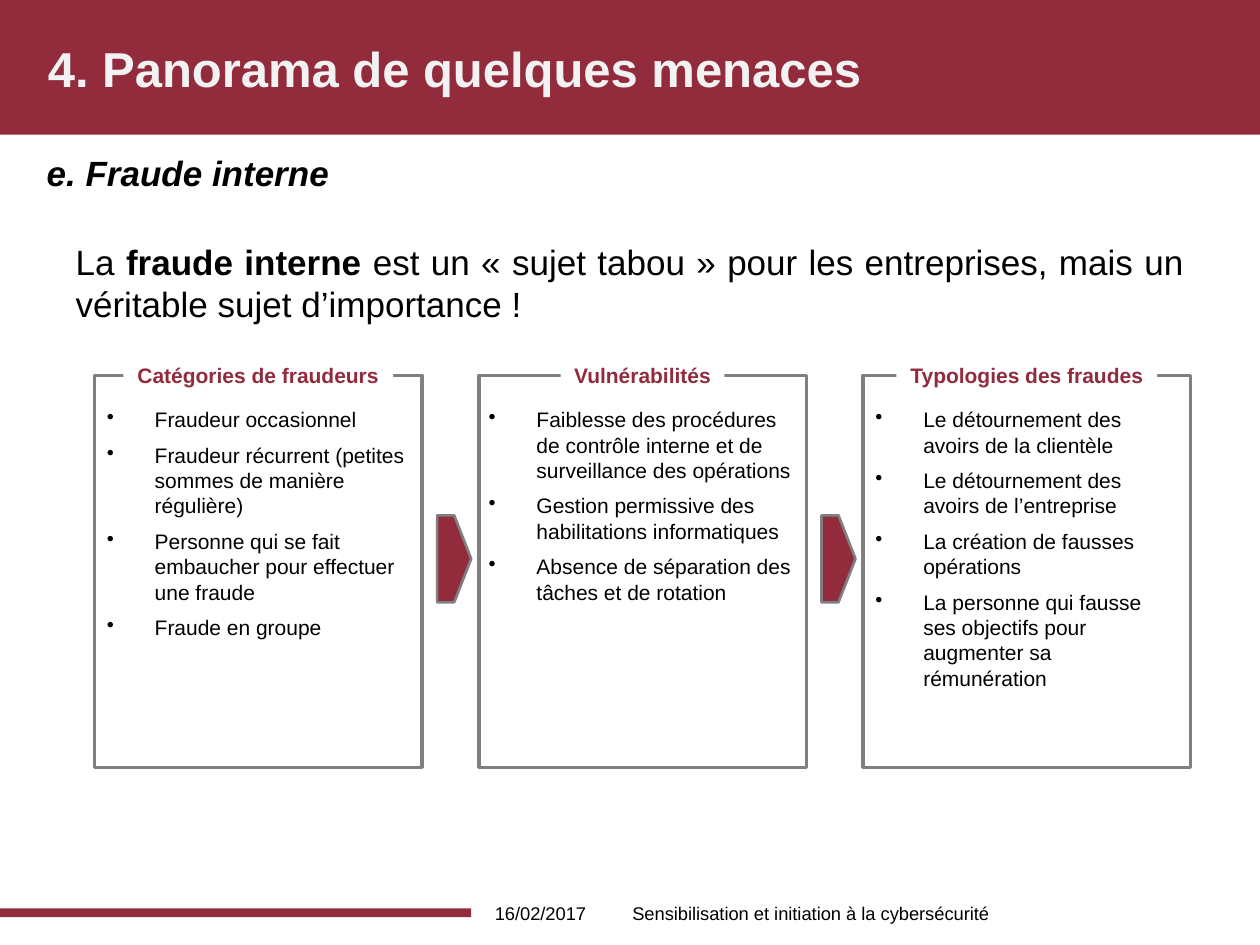
"""Build the slide on internal fraud: three framed lists linked by arrows."""
import pptx
import pptx.dml.color
import pptx.enum.shapes
import pptx.enum.text
import pptx.oxml.ns
import pptx.util
from lxml import etree

Inches = pptx.util.Inches
Pt = pptx.util.Pt
Shape = pptx.enum.shapes.MSO_SHAPE
Align = pptx.enum.text.PP_ALIGN
Anchor = pptx.enum.text.MSO_ANCHOR
AutoSize = pptx.enum.text.MSO_AUTO_SIZE

BURGUNDY, GREY, BLACK, WHITE = "922B3C", "808080", "000000", "FFFFFF"
COLUMN_LEFT, COLUMN_STEP, COLUMN_WIDTH = 0.75, 3.05, 2.6
FRAME_TOP, FRAME_HEIGHT = 2.98, 3.11

COLUMNS = [
    ("Catégories de fraudeurs", 2.14, 0.75, [
        "Fraudeur occasionnel",
        "Fraudeur récurrent (petites sommes de manière régulière)",
        "Personne qui se fait embaucher pour effectuer une fraude",
        "Fraude en groupe",
    ]),
    ("Vulnérabilités", 1.3, 3.78, [
        "Faiblesse des procédures de contrôle interne et de surveillance des opérations",
        "Gestion permissive des habilitations informatiques",
        "Absence de séparation des tâches et de rotation",
    ]),
    ("Typologies des fraudes", 2.07, 6.85, [
        "Le détournement des avoirs de la clientèle",
        "Le détournement des avoirs de l’entreprise",
        "La création de fausses opérations",
        "La personne qui fausse ses objectifs pour augmenter sa rémunération",
    ]),
]


def color(value):
    """Turn a hex string into a colour."""
    return pptx.dml.color.RGBColor.from_string(value)


def box(left, top, width, height):
    """Convert a position and size in inches to lengths."""
    return Inches(left), Inches(top), Inches(width), Inches(height)


def add_run(paragraph, text, size, fill=BLACK, bold=False, italic=False):
    """Append one formatted run to a paragraph."""
    run = paragraph.add_run()
    run.text = text
    font = run.font
    font.name, font.size, font.bold, font.italic = "Arial", Pt(size), bold, italic
    font.color.rgb = color(fill)


def set_bullet(paragraph, character=None, indent=0):
    """Give a paragraph a hanging bullet, or none."""
    properties = paragraph._p.get_or_add_pPr()
    properties.set("marL", str(Inches(indent)))
    properties.set("indent", str(-Inches(indent)))
    tag = "a:buChar" if character else "a:buNone"
    bullet = etree.SubElement(properties, pptx.oxml.ns.qn(tag))
    if character:
        bullet.set("char", character)


def add_shape(slide, kind, position, fill=None, line=None, line_width=1):
    """Add a preset shape with plain fill and outline."""
    shape = slide.shapes.add_shape(kind, *box(*position))
    shape.shadow.inherit = False
    if fill:
        shape.fill.solid()
        shape.fill.fore_color.rgb = color(fill)
    else:
        shape.fill.background()
    if line:
        shape.line.color.rgb = color(line)
        shape.line.width = Pt(line_width)
    else:
        shape.line.fill.background()
    return shape


def fill_placeholder(placeholder, position, align, anchor=Anchor.TOP):
    """Move a placeholder and return its bullet-free first paragraph."""
    placeholder.left, placeholder.top, placeholder.width, placeholder.height = box(*position)
    frame = placeholder.text_frame
    frame.auto_size = AutoSize.NONE
    frame.word_wrap = True
    frame.vertical_anchor = anchor
    paragraph = frame.paragraphs[0]
    paragraph.alignment = align
    paragraph.space_before = Pt(0)
    set_bullet(paragraph)
    return paragraph


def add_footer(slide, position, text, align):
    """Add a small footer text."""
    frame = slide.shapes.add_textbox(*box(*position)).text_frame
    frame.word_wrap = True
    frame.vertical_anchor = Anchor.MIDDLE
    frame.paragraphs[0].alignment = align
    add_run(frame.paragraphs[0], text, 10.5)


def add_heading(slide, center, width, text):
    """Add a column heading that interrupts the top of its frame."""
    height = 0.3
    position = (center - width / 2, FRAME_TOP - height / 2, width, height)
    frame = add_shape(slide, Shape.RECTANGLE, position, WHITE).text_frame
    frame.word_wrap = False
    frame.vertical_anchor = Anchor.TOP
    frame.paragraphs[0].alignment = Align.CENTER
    add_run(frame.paragraphs[0], text, 12, BURGUNDY, bold=True)


def add_list(slide, left, items):
    """Add the bulleted list of a column."""
    frame = slide.shapes.add_textbox(*box(left, 3.18, COLUMN_WIDTH, 2.8)).text_frame
    frame.word_wrap = True
    for index, item in enumerate(items):
        paragraph = frame.add_paragraph() if index else frame.paragraphs[0]
        paragraph.space_before = Pt(6 if index else 0)
        set_bullet(paragraph, "•", 0.38)
        add_run(paragraph, item, 12)


def add_column(slide, index, heading, heading_width, list_left, items):
    """Add a frame with its heading and list."""
    left = COLUMN_LEFT + index * COLUMN_STEP
    position = (left, FRAME_TOP, COLUMN_WIDTH, FRAME_HEIGHT)
    add_shape(slide, Shape.RECTANGLE, position, line=GREY, line_width=2)
    add_heading(slide, left + COLUMN_WIDTH / 2, heading_width, heading)
    add_list(slide, list_left, items)


def add_band(slide, position):
    """Add a burgundy band behind the other elements."""
    band = add_shape(slide, Shape.RECTANGLE, position, BURGUNDY)
    slide.shapes._spTree.insert(2, band._element)


def main():
    """Build and save the presentation."""
    presentation = pptx.Presentation()
    presentation.slide_width, presentation.slide_height = Inches(10), Inches(7.5)
    slide = presentation.slides.add_slide(presentation.slide_layouts[3])
    add_band(slide, (0, 0, 10, 1.07))
    add_band(slide, (0, 7.21, 3.74, 0.07))

    title, body, subtitle = slide.placeholders
    paragraph = fill_placeholder(title, (0.28, 0.01, 9.53, 1.06), Align.LEFT, Anchor.MIDDLE)
    add_run(paragraph, "4. Panorama de quelques menaces", 28, "F2F2F2", bold=True)
    paragraph = fill_placeholder(body, (0.5, 1.86, 9, 5.04), Align.JUSTIFY)
    add_run(paragraph, "La ", 20)
    add_run(paragraph, "fraude interne", 20, bold=True)
    add_run(paragraph, " est un « sujet tabou » pour les entreprises, "
            "mais un véritable sujet d’importance !", 20)
    paragraph = fill_placeholder(subtitle, (0.27, 1.15, 9.53, 0.63), Align.LEFT)
    add_run(paragraph, "e. Fraude interne", 20, bold=True, italic=True)

    for index, column in enumerate(COLUMNS):
        add_column(slide, index, *column)
    for index in range(len(COLUMNS) - 1):
        position = (3.47 + index * COLUMN_STEP, 4.09, 0.27, 0.69)
        add_shape(slide, Shape.PENTAGON, position, BURGUNDY, GREY, 1.5)

    add_footer(slide, (3.74, 7.05, 1.1, 0.4), "16/02/2017", Align.CENTER)
    add_footer(slide, (4.92, 7.05, 3.32, 0.4),
               "Sensibilisation et initiation à la cybersécurité", Align.LEFT)
    presentation.save("out.pptx")


if __name__ == "__main__":
    main()
